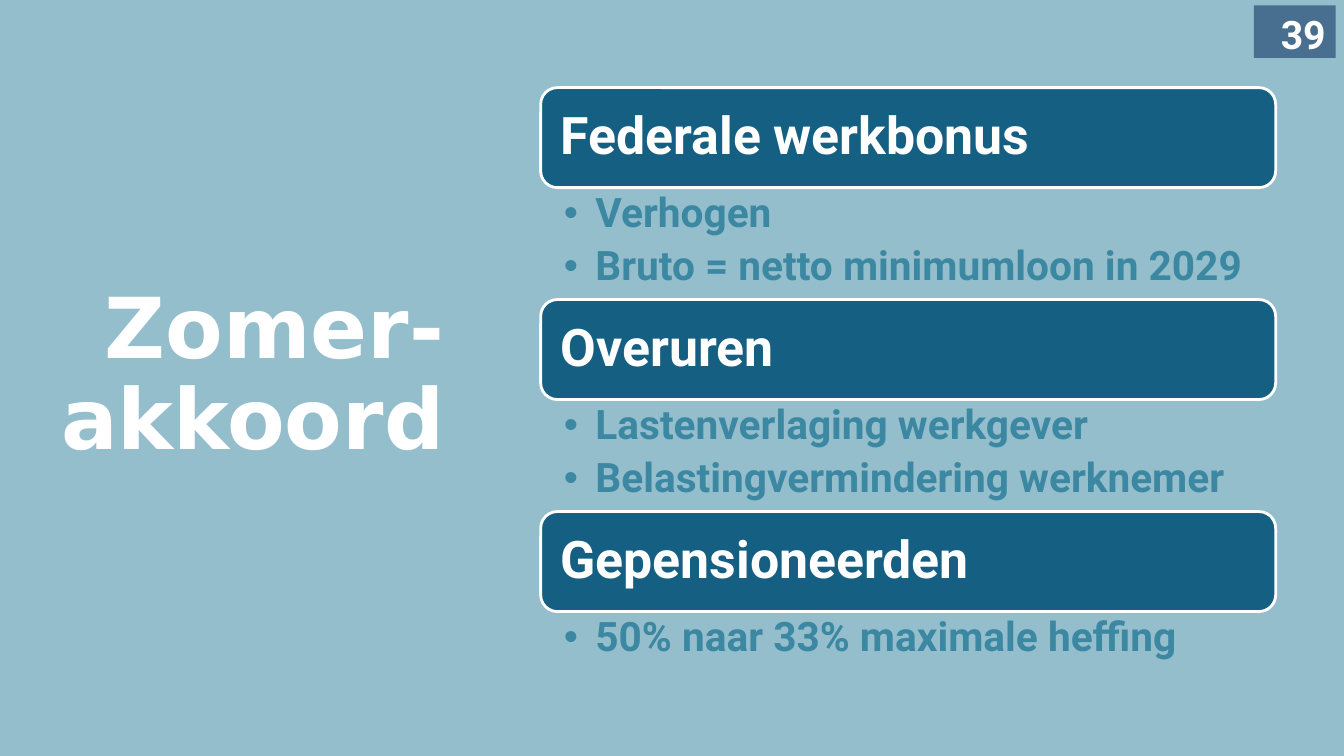
from dataclasses import dataclass

from lxml import etree
from pptx import Presentation
from pptx.dml.color import RGBColor
from pptx.enum.shapes import MSO_SHAPE
from pptx.enum.text import MSO_ANCHOR, MSO_AUTO_SIZE, PP_ALIGN
from pptx.oxml.ns import qn
from pptx.util import Pt

RECTANGLE, ROUNDED = MSO_SHAPE.RECTANGLE, MSO_SHAPE.ROUNDED_RECTANGLE
TOP, MIDDLE, BOTTOM = MSO_ANCHOR.TOP, MSO_ANCHOR.MIDDLE, MSO_ANCHOR.BOTTOM
LEFT, RIGHT = PP_ALIGN.LEFT, PP_ALIGN.RIGHT
NO_AUTOFIT = MSO_AUTO_SIZE.NONE


@dataclass(frozen=True)
class Theme:
    background: RGBColor = RGBColor.from_string("94BECC")
    heading_fill: RGBColor = RGBColor.from_string("156082")
    number_fill: RGBColor = RGBColor.from_string("496F90")
    accent: RGBColor = RGBColor.from_string("3C88A3")
    white: RGBColor = RGBColor.from_string("FFFFFF")
    title_font: str = "DejaVu Sans"
    body_font: str = "Roboto"
    title_size: int = 60
    heading_size: int = 37
    list_size: int = 29
    number_size: int = 28


theme = Theme()


def set_frame(box, anchor, insets):
    frame = box.text_frame
    frame.word_wrap = True
    frame.auto_size = NO_AUTOFIT
    frame.vertical_anchor = anchor
    frame.margin_left, frame.margin_top, frame.margin_right, frame.margin_bottom = map(Pt, insets)
    return frame


def write(para, lines, font, size, color, align=LEFT, spacing=0.9):
    para.alignment = align
    para.line_spacing = spacing
    para.space_before = Pt(0)
    for index, line in enumerate(lines):
        if index:
            para.add_line_break()
        span = para.add_run()
        span.text = line
        span.font.name = font
        span.font.size = Pt(size)
        span.font.bold = True
        span.font.color.rgb = color


# Page
deck = Presentation()
deck.slide_width, deck.slide_height = Pt(960), Pt(540)
page = deck.slides.add_slide(deck.slide_layouts[4])
page.background.fill.solid()
page.background.fill.fore_color.rgb = theme.background

# Title
title = page.shapes.title
title.left, title.top, title.width, title.height = Pt(24.5), Pt(149), Pt(300), Pt(188.6)
frame = set_frame(title, BOTTOM, (7.2, 3.6, 7.2, 3.6))
write(frame.paragraphs[0], ["Zomer-", "akkoord"], theme.title_font, theme.title_size,
      theme.white, RIGHT)

# Headings, each with its list below
topics = [
    ("Federale werkbonus", ["Verhogen", "Bruto = netto minimumloon in 2029"]),
    ("Overuren", ["Lastenverlaging werkgever", "Belastingvermindering werknemer"]),
    ("Gepensioneerden", ["50% naar 33% maximale heffing"]),
]
column_left, column_width = 386.2, 525
first_top, topic_pitch, heading_height = 62.6, 151.4, 71.4
list_heights = {1: 48.2, 2: 80}
title_holder, *list_holders = page.placeholders

for index, (heading, items) in enumerate(topics):
    top = first_top + index * topic_pitch
    bar = page.shapes.add_shape(ROUNDED, Pt(column_left), Pt(top), Pt(column_width),
                                Pt(heading_height))
    bar.shadow.inherit = False
    bar.fill.solid()
    bar.fill.fore_color.rgb = theme.heading_fill
    bar.line.color.rgb = theme.white
    bar.line.width = Pt(2)
    frame = set_frame(bar, MIDDLE, (10.8, 10.8, 10.8, 10.8))
    write(frame.paragraphs[0], [heading], theme.body_font, theme.heading_size, theme.white)

    body = list_holders[index]
    body.left, body.top = Pt(column_left), Pt(top + heading_height)
    body.width, body.height = Pt(column_width), Pt(list_heights[len(items)])
    frame = set_frame(body, TOP, (16.6, 3.6, 20.9, 3.6))
    for number, item in enumerate(items):
        para = frame.add_paragraph() if number else frame.paragraphs[0]
        properties = para._p.get_or_add_pPr()
        properties.set("marL", str(Pt(22.5)))
        properties.set("indent", str(Pt(-22.5)))
        etree.SubElement(properties, qn("a:buChar")).set("char", "•")
        write(para, [item], theme.body_font, theme.list_size, theme.accent)
        para.space_after = Pt(6.5)

# Unused placeholder
for holder in list_holders[len(topics):]:
    holder.element.getparent().remove(holder.element)

# Page number
badge = page.shapes.add_shape(RECTANGLE, Pt(895.7), Pt(3.8), Pt(58.4), Pt(37.6))
badge.shadow.inherit = False
badge.fill.solid()
badge.fill.fore_color.rgb = theme.number_fill
badge.line.fill.background()
frame = set_frame(badge, TOP, (7.2, 3.6, 7.2, 3.6))
write(frame.paragraphs[0], ["39"], theme.body_font, theme.number_size, theme.white, RIGHT, 1.0)

deck.save("out.pptx")
